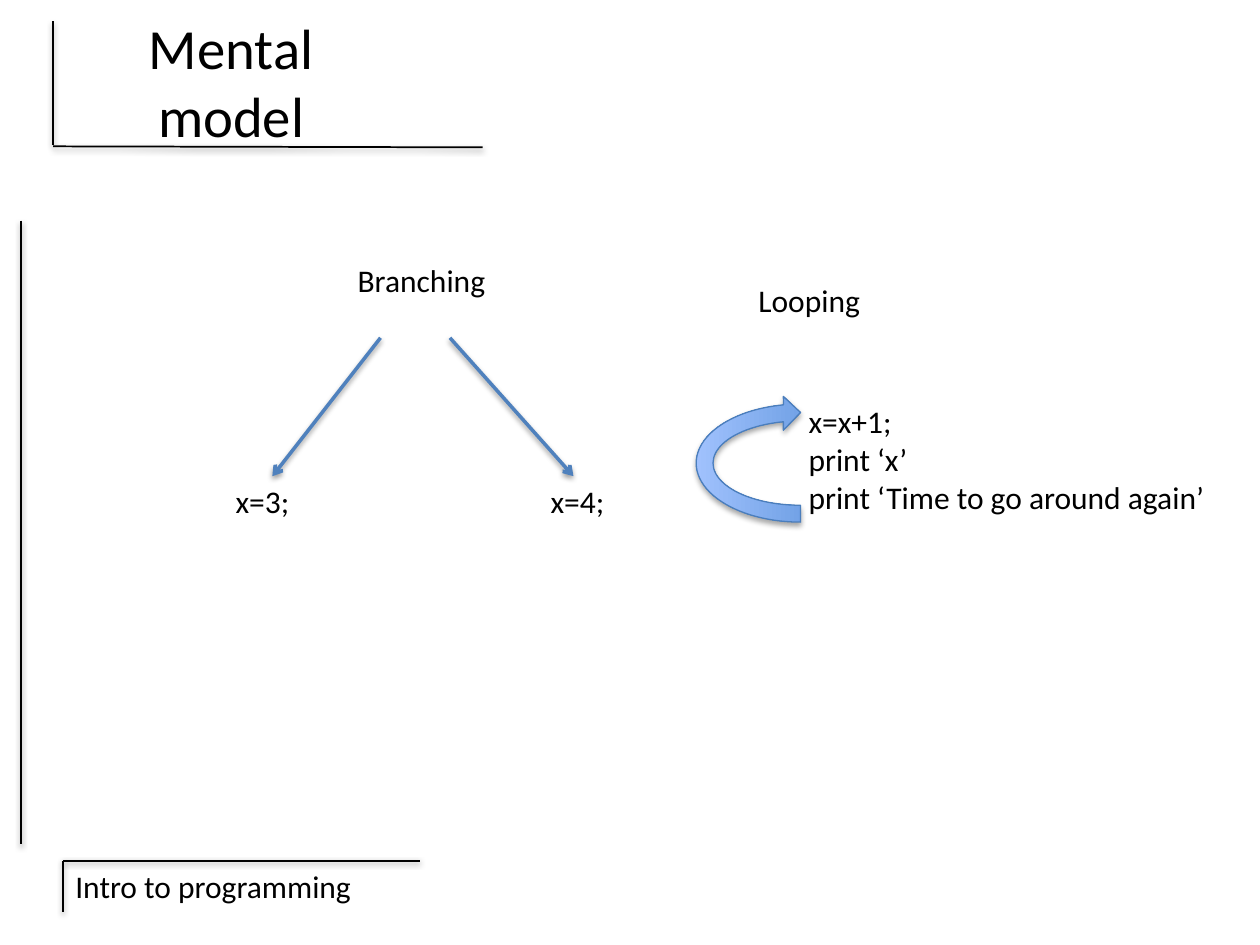
from dataclasses import dataclass

from lxml.etree import SubElement
from pptx import Presentation
from pptx.dml.color import RGBColor as RGB
from pptx.enum.shapes import MSO_CONNECTOR as Connector, MSO_SHAPE as Shape
from pptx.enum.text import MSO_ANCHOR as Anchor, MSO_AUTO_SIZE as AutoSize, PP_ALIGN as Align
from pptx.oxml.ns import qn
from pptx.util import Cm, Pt


@dataclass(frozen=True)
class Theme:
    font: str = "Calibri"
    ink: RGB = RGB(0x00, 0x00, 0x00)
    arrow: RGB = RGB(0x4F, 0x81, 0xBD)
    loop_outline: RGB = RGB(0x4B, 0x7E, 0xBC)
    loop_dark: RGB = RGB(0x3F, 0x80, 0xCE)
    loop_light: RGB = RGB(0xA4, 0xC4, 0xFF)
    title_size: float = 32.4
    body_size: float = 18
    rule_width: float = 1
    arrow_width: float = 2
    outline_width: float = 0.75
    code_indent: float = 0.95


class SlideBuilder:
    """Holds the theme and the slide being drawn; all lengths are centimetres."""

    def __init__(self, slide, theme):
        self.slide = slide
        self.theme = theme

    def style_paragraph(self, paragraph, size):
        paragraph.font.name = self.theme.font
        paragraph.font.size = Pt(size)
        paragraph.font.color.rgb = self.theme.ink

    def add_shadow(self, shape, opacity, distance):
        """Cast a soft shadow straight down, replacing the theme's effect."""
        effects = SubElement(shape._element.spPr, qn("a:effectLst"))
        shadow = SubElement(effects, qn("a:outerShdw"), blurRad=str(Pt(3.15)),
                            dist=str(Pt(distance)), dir="5400000", rotWithShape="0")
        black = SubElement(shadow, qn("a:srgbClr"), val="000000")
        SubElement(black, qn("a:alpha"), val=str(opacity * 1000))

    def title(self, text, left, top, width, height):
        shape = self.slide.shapes.title
        shape.left, shape.top, shape.width, shape.height = map(Cm, (left, top, width, height))
        frame = shape.text_frame
        frame.text = text
        frame.auto_size = AutoSize.NONE
        frame.vertical_anchor = Anchor.MIDDLE
        paragraph = frame.paragraphs[0]
        paragraph.alignment = Align.CENTER
        self.style_paragraph(paragraph, self.theme.title_size)

    def text(self, lines, left, top, width, height, wrap=True, indent=0):
        """Add a text box with one paragraph per line and a hanging indent."""
        box = self.slide.shapes.add_textbox(*map(Cm, (left, top, width, height)))
        frame = box.text_frame
        frame.text = "\n".join(lines)
        frame.word_wrap = wrap
        for paragraph in frame.paragraphs:
            self.style_paragraph(paragraph, self.theme.body_size)
            if indent:
                properties = paragraph._p.get_or_add_pPr()
                properties.set("marL", str(Cm(indent)))
                properties.set("indent", str(-Cm(indent)))

    def code(self, lines, left, top, width, height):
        self.text(lines, left, top, width, height, indent=self.theme.code_indent)

    def line(self, start, end, color, width, arrowhead=False):
        connector = self.slide.shapes.add_connector(
            Connector.STRAIGHT, *map(Cm, (*start, *end)))
        connector.line.color.rgb = color
        connector.line.width = Pt(width)
        if arrowhead:
            SubElement(connector.line._get_or_add_ln(), qn("a:tailEnd"), type="arrow")
        self.add_shadow(connector, 38, 1.57)

    def rule(self, start, end):
        self.line(start, end, self.theme.ink, self.theme.rule_width)

    def arrow(self, start, end):
        self.line(start, end, self.theme.arrow, self.theme.arrow_width, arrowhead=True)

    def loop_arrow(self, left, top, width, height):
        shape = self.slide.shapes.add_shape(
            Shape.CIRCULAR_ARROW, *map(Cm, (left, top, width, height)))
        shape.rotation = 270
        shape.fill.gradient()
        shape.fill.gradient_angle = 90
        colors = (self.theme.loop_dark, self.theme.loop_light)
        for position, (stop, color) in enumerate(zip(shape.fill.gradient_stops, colors)):
            stop.position = position
            stop.color.rgb = color
        shape.line.color.rgb = self.theme.loop_outline
        shape.line.width = Pt(self.theme.outline_width)
        self.add_shadow(shape, 35, 1.81)


def main():
    presentation = Presentation()
    presentation.slide_width, presentation.slide_height = Cm(25.4), Cm(19.05)
    title_only = presentation.slide_layouts[5]
    builder = SlideBuilder(presentation.slides.add_slide(title_only), Theme())

    # Frame: footer corner, left margin and title corner
    footer_corner = (1.27, 17.35)
    builder.rule((8.46, 17.35), footer_corner)
    builder.rule((0.43, 4.45), (0.43, 17.02))
    builder.text(["Intro to programming"], *footer_corner, 6.15, 1.02)
    builder.rule(footer_corner, (1.27, 18.39))
    builder.rule((9.73, 2.97), (1.07, 2.95))
    builder.rule((1.07, 0.43), (1.07, 2.92))
    builder.title("Mental model", 1.27, 0.43, 6.78, 2.41)

    # Branching
    builder.text(["Branching"], 6.96, 5.13, 3.1, 1.02, wrap=False)
    branch_top, branch_bottom = 6.81, 9.6
    branches = [("x=3;", 7.67, 5.49, 4.5), ("x=4;", 9.07, 11.56, 10.85)]
    for statement, start_x, end_x, text_left in branches:
        builder.arrow((start_x, branch_top), (end_x, branch_bottom))
        builder.code([statement], text_left, branch_bottom, 2.46, 1.8)

    # Looping
    builder.text(["Looping"], 15.04, 5.54, 2.59, 1.02, wrap=False)
    builder.loop_arrow(14.78, 7.06, 2.72, 4.55)
    builder.code(["x=x+1;", "print ‘x’", "print ‘Time to go around again’"],
                 16.05, 7.98, 9.35, 3.33)

    presentation.save("out.pptx")


if __name__ == "__main__":
    main()
